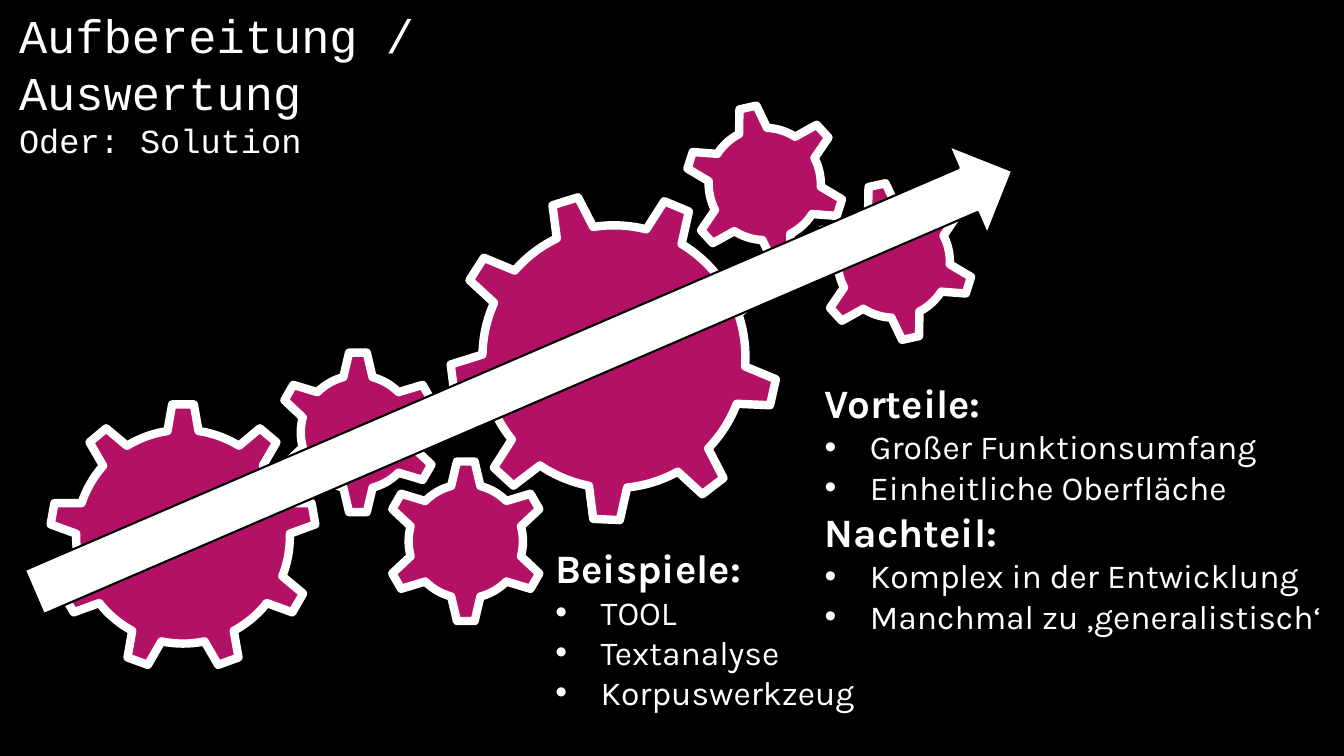
from lxml.etree import SubElement
from pptx import Presentation
from pptx.dml.color import RGBColor
from pptx.enum.shapes import MSO_SHAPE
from pptx.enum.text import MSO_ANCHOR, MSO_AUTO_SIZE, PP_ALIGN
from pptx.oxml.ns import qn
from pptx.util import Inches, Pt

BLACK = RGBColor(0x00, 0x00, 0x00)
WHITE = RGBColor(0xFF, 0xFF, 0xFF)
MAGENTA = RGBColor(0xB3, 0x11, 0x66)

# preset, left, top, diameter, rotation
GEARS = [
    (MSO_SHAPE.GEAR_9, 4.46, 1.91, 3.26, 22.6),
    (MSO_SHAPE.GEAR_6, 6.79, 1.03, 1.59, -12.4),
    (MSO_SHAPE.GEAR_9, 0.49, 4.0, 2.65, 0),
    (MSO_SHAPE.GEAR_6, 2.74, 3.48, 1.62, 0),
    (MSO_SHAPE.GEAR_6, 3.81, 4.56, 1.62, 0),
    (MSO_SHAPE.GEAR_6, 8.07, 1.8, 1.59, -12.4),
]
EXAMPLES = [("Beispiele:", ["TOOL", "Textanalyse", "Korpuswerkzeug"])]
ASSESSMENT = [
    ("Vorteile:", ["Großer Funktionsumfang", "Einheitliche Oberfläche"]),
    ("Nachteil:", ["Komplex in der Entwicklung", "Manchmal zu ‚generalistisch‘"]),
]


def add_outlined_shape(slide, preset, box, rotation, fill, line, line_width):
    shape = slide.shapes.add_shape(preset, *map(Inches, box))
    shape.rotation = rotation
    shape.shadow.inherit = False
    shape.fill.solid()
    shape.fill.fore_color.rgb = fill
    shape.line.color.rgb = line
    shape.line.width = Pt(line_width)


def add_text_frame(slide, box):
    frame = slide.shapes.add_textbox(*map(Inches, box)).text_frame
    frame.word_wrap = True
    frame.auto_size = MSO_AUTO_SIZE.SHAPE_TO_FIT_TEXT
    frame.vertical_anchor = MSO_ANCHOR.TOP
    return frame


def write_line(frame, text, font_name, size, bold=False):
    """Fill the first paragraph if it is still empty, otherwise append one."""
    para = frame.paragraphs[-1]
    if para.text:
        para = frame.add_paragraph()
    para.text = text
    para.alignment = PP_ALIGN.LEFT
    font = para.runs[0].font
    font.name = font_name
    font.size = Pt(size)
    font.bold = bold
    font.color.rgb = WHITE
    return para


def add_bullet(para):
    properties = para._p.get_or_add_pPr()
    properties.set("marL", str(Inches(0.45)))
    properties.set("indent", str(Inches(-0.45)))
    SubElement(properties, qn("a:buFont")).set("typeface", "Arial")
    SubElement(properties, qn("a:buChar")).set("char", "•")


def add_bullet_groups(slide, box, groups):
    frame = add_text_frame(slide, box)
    for heading, items in groups:
        write_line(frame, heading, "Karla", 28.8, bold=True)
        for item in items:
            add_bullet(write_line(frame, item, "Karla", 24))


def add_gear_train(slide):
    for preset, left, top, diameter, rotation in GEARS:
        box = (left, top, diameter, diameter)
        add_outlined_shape(slide, preset, box, rotation, MAGENTA, WHITE, 6)


def add_title(slide, box):
    frame = add_text_frame(slide, box)
    write_line(frame, "Aufbereitung / Auswertung", "Courier New", 33.6)
    write_line(frame, "Oder: Solution", "Courier New", 24)


def main():
    deck = Presentation()
    deck.slide_width = Inches(13.33)
    deck.slide_height = Inches(7.5)
    slide = deck.slides.add_slide(deck.slide_layouts[6])
    slide.background.fill.solid()
    slide.background.fill.fore_color.rgb = BLACK

    add_bullet_groups(slide, (5.41, 5.34, 6, 1.8), EXAMPLES)
    add_bullet_groups(slide, (8.08, 3.7, 6, 2.69), ASSESSMENT)
    add_gear_train(slide)
    add_outlined_shape(slide, MSO_SHAPE.RIGHT_ARROW, (-0.09, 3.31, 10.56, 0.95),
                       -23.3, WHITE, BLACK, 1.5)
    add_title(slide, (0.09, 0.02, 6.95, 1.07))
    deck.save("out.pptx")


if __name__ == "__main__":
    main()
